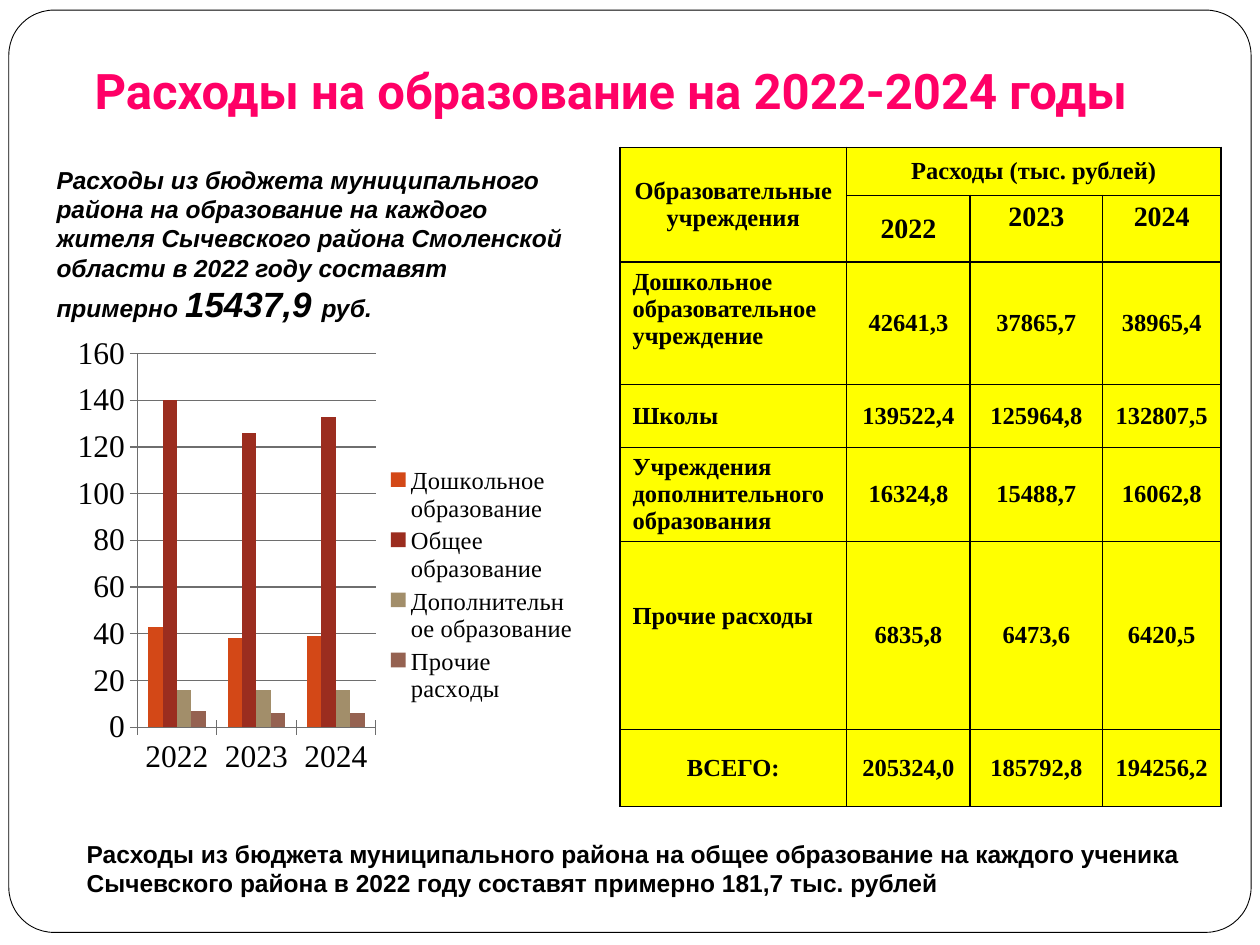
from lxml import etree
from pptx import Presentation
from pptx.chart.data import CategoryChartData
from pptx.dml.color import RGBColor
from pptx.enum.chart import XL_CHART_TYPE, XL_LEGEND_POSITION, XL_TICK_MARK
from pptx.enum.shapes import MSO_SHAPE
from pptx.enum.text import MSO_ANCHOR, PP_ALIGN
from pptx.oxml import parse_xml
from pptx.oxml.ns import nsdecls, qn
from pptx.util import Inches, Pt

COLORS = {"black": "000000", "white": "FFFFFF", "pink": "FF0066",
          "yellow": "FFFF00", "grid": "6E6E6E"}
SERIF = "Times New Roman"
YEARS = ["2022", "2023", "2024"]


def rgb(name):
    return RGBColor.from_string(COLORS[name])


def add_run(p, text, size, font, color="black", italic=None):
    r = p.add_run()
    r.text = text
    r.font.size, r.font.name = Pt(size), font
    r.font.bold, r.font.italic = True, italic
    r.font.color.rgb = rgb(color)


prs = Presentation()
prs.slide_width, prs.slide_height = Inches(10), Inches(7.5)
s = prs.slides.add_slide(prs.slide_layouts[6])

# Rounded frame
sp = s.shapes.add_shape(MSO_SHAPE.ROUNDED_RECTANGLE, Inches(0.07), Inches(0.08),
                        Inches(9.86), Inches(7.32))
sp.adjustments[0] = 0.049
sp.shadow.inherit = False
sp.fill.solid()
sp.fill.fore_color.rgb = rgb("white")
sp.line.color.rgb = rgb("black")
sp.line.width = Pt(0.5)

# Title and notes: box, anchor, alignment, bottom margin, font, color, italic, runs
texts = [
    ((0, 0.28, 9.69, 0.77), MSO_ANCHOR.BOTTOM, PP_ALIGN.CENTER, 0.1,
     "Roboto", "pink", None,
     [("Расходы на образование на 2022-2024 годы", 28)]),
    ((0.35, 1.23, 4.25, 1.42), MSO_ANCHOR.MIDDLE, PP_ALIGN.LEFT, 0.05,
     "Arial", "black", True,
     [("Расходы из бюджета муниципального района на образование на каждого "
       "жителя Сычевского района Смоленской области в 2022 году составят "
       "примерно ", 14), ("15437,9 ", 20), ("руб.", 14)]),
    ((0.59, 6.66, 9, 0.46), MSO_ANCHOR.MIDDLE, PP_ALIGN.LEFT, 0.05,
     "Arial", "black", None,
     [("Расходы из бюджета муниципального района на общее образование на "
       "каждого ученика Сычевского района в 2022 году составят примерно "
       "181,7 тыс. рублей", 14)]),
]
for box, anchor, align, bottom, font, color, italic, runs in texts:
    tf = s.shapes.add_textbox(*[Inches(v) for v in box]).text_frame
    tf.word_wrap = True
    tf.vertical_anchor = anchor
    tf.margin_bottom = Inches(bottom)
    p = tf.paragraphs[0]
    p.alignment = align
    for text, size in runs:
        add_run(p, text, size, font, color, italic)

# Expenditure table
rows = [
    ["Образовательные учреждения", "Расходы (тыс. рублей)", "", ""],
    [""] + YEARS,
    ["Дошкольное образовательное учреждение", "42641,3", "37865,7", "38965,4"],
    ["Школы", "139522,4", "125964,8", "132807,5"],
    ["Учреждения \nдополнительного\nобразования", "16324,8", "15488,7", "16062,8"],
    ["Прочие расходы", "6835,8", "6473,6", "6420,5"],
    ["ВСЕГО:", "205324,0", "185792,8", "194256,2"],
]
widths = [1.8, 0.98, 1.05, 0.94]
heights = [0.38, 0.53, 0.97, 0.5, 0.75, 1.49, 0.61]
top_cells = {(1, 2), (1, 3), (2, 0), (5, 0)}
table = s.shapes.add_table(len(rows), len(widths), Inches(4.92), Inches(1.17),
                           Inches(sum(widths)), Inches(sum(heights))).table
for col, w in zip(table.columns, widths):
    col.width = Inches(w)
for row, h in zip(table.rows, heights):
    row.height = Inches(h)
table.cell(0, 0).merge(table.cell(1, 0))
table.cell(0, 1).merge(table.cell(0, 3))

for i, row in enumerate(rows):
    for j, text in enumerate(row):
        cell = table.cell(i, j)
        # Borders go before the fill in the cell properties
        tcPr = cell._tc.get_or_add_tcPr()
        for side in ("lnL", "lnR", "lnT", "lnB"):
            ln = etree.SubElement(tcPr, qn("a:" + side), w=str(Pt(1)))
            fill = etree.SubElement(ln, qn("a:solidFill"))
            etree.SubElement(fill, qn("a:srgbClr"), val=COLORS["black"])
        cell.fill.solid()
        cell.fill.fore_color.rgb = rgb("yellow")
        cell.vertical_anchor = MSO_ANCHOR.TOP if (i, j) in top_cells else MSO_ANCHOR.MIDDLE
        if not text:
            continue
        for k, line in enumerate(text.split("\n")):
            tf = cell.text_frame
            p = tf.add_paragraph() if k else tf.paragraphs[0]
            is_label = j == 0 and 2 <= i <= 5
            p.alignment = PP_ALIGN.JUSTIFY if is_label else PP_ALIGN.CENTER
            add_run(p, line, 16 if i == 1 else 14, SERIF)
table.cell(5, 0).margin_top = Inches(0.48)
# Tight margins keep the multi-line labels within their rows
for i in (0, 4):
    cell = table.cell(i, 0)
    cell.margin_top = cell.margin_bottom = Inches(0.01)

# Column chart, in millions of rubles
series = [
    ("Дошкольное образование", (43, 38, 39), "D34817"),
    ("Общее образование", (140, 126, 133), "9B2D1F"),
    ("Дополнительное образование", (16, 16, 16), "A28E6A"),
    ("Прочие расходы", (7, 6, 6), "956251"),
]
data = CategoryChartData()
data.categories = YEARS
for name, values, _ in series:
    data.add_series(name, values)
chart = s.shapes.add_chart(XL_CHART_TYPE.COLUMN_CLUSTERED, Inches(0.31), Inches(2.58),
                           Inches(4.38), Inches(4.13), data).chart
chart.has_title = False
chart.font.name, chart.font.size = SERIF, Pt(18)
chart.font.color.rgb = rgb("black")
plot = chart.plots[0]
plot.gap_width, plot.overlap = 150, 0
plot.vary_by_categories = False
for ser, (_, _, color) in zip(plot.series, series):
    ser.format.fill.solid()
    ser.format.fill.fore_color.rgb = RGBColor.from_string(color)

# Axes and legend
cat_axis, val_axis = chart.category_axis, chart.value_axis
val_axis.minimum_scale, val_axis.maximum_scale, val_axis.major_unit = 0, 160, 20
val_axis.has_major_gridlines = True
val_axis.tick_labels.number_format = "General"
val_axis.tick_labels.number_format_is_linked = False
for axis in (cat_axis, val_axis):
    axis.major_tick_mark = XL_TICK_MARK.CROSS
    axis.format.line.color.rgb = rgb("grid")
val_axis.major_gridlines.format.line.color.rgb = rgb("grid")
chart.has_legend = True
chart.legend.position = XL_LEGEND_POSITION.RIGHT
chart.legend.include_in_layout = False
chart.legend.font.size, chart.legend.font.name = Pt(14), SERIF
chart.legend.font.color.rgb = rgb("black")

# Fixed inner plot area
area = chart._chartSpace.chart.plotArea
for old in area.findall(qn("c:layout")):
    area.remove(old)
layout = parse_xml(f"<c:layout {nsdecls('c')}><c:manualLayout/></c:layout>")
settings = [("layoutTarget", "inner"), ("xMode", "edge"), ("yMode", "edge"),
            ("x", "0.178"), ("y", "0.055"), ("w", "0.432"), ("h", "0.718")]
for tag, val in settings:
    etree.SubElement(layout[0], qn("c:" + tag), val=val)
area.insert(0, layout)

prs.save("out.pptx")
